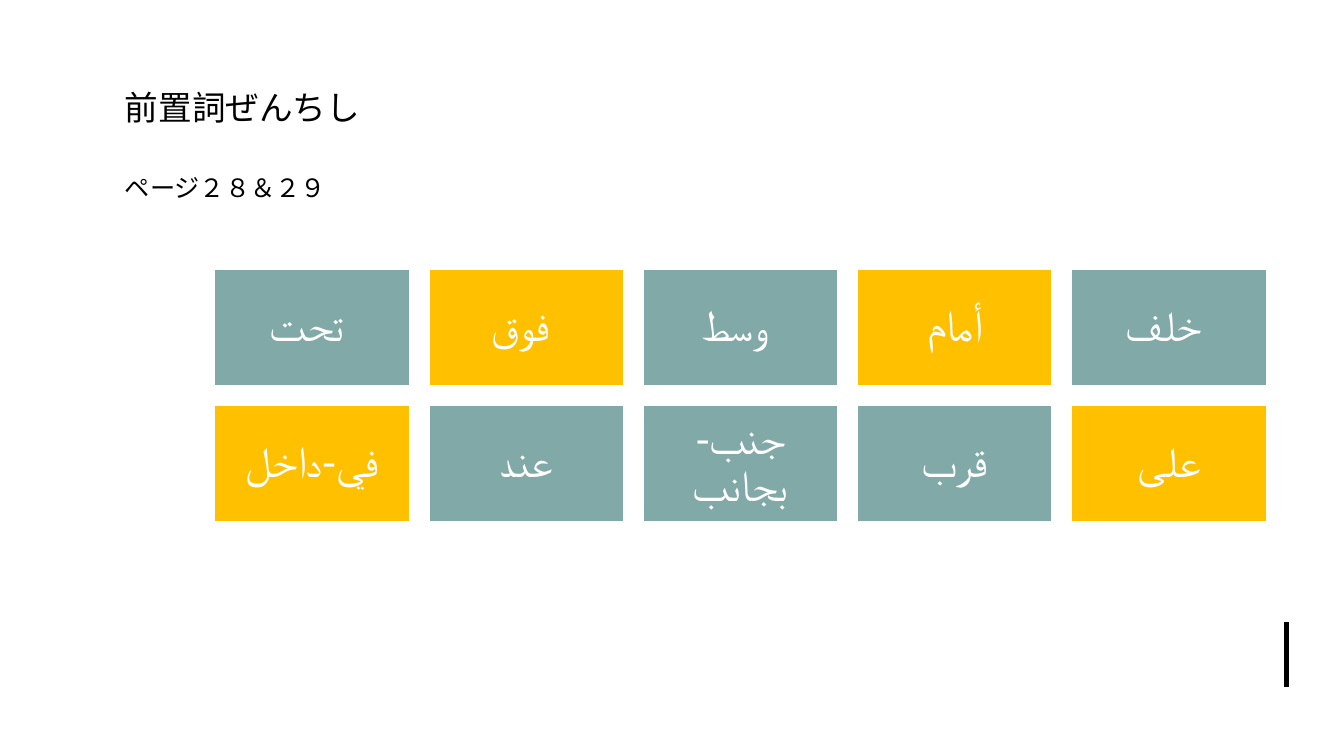
"""Builds a slide of Arabic prepositions on two rows of coloured tiles."""
from typing import NamedTuple

from lxml import etree
from pptx import Presentation
from pptx.dml.color import RGBColor
from pptx.enum.shapes import MSO_CONNECTOR, MSO_SHAPE
from pptx.enum.text import MSO_ANCHOR, MSO_AUTO_SIZE, PP_ALIGN
from pptx.oxml.ns import qn
from pptx.util import Inches, Pt

RECT = MSO_SHAPE.RECTANGLE
STRAIGHT = MSO_CONNECTOR.STRAIGHT
TOP, MIDDLE = MSO_ANCHOR.TOP, MSO_ANCHOR.MIDDLE
LEFT, CENTER = PP_ALIGN.LEFT, PP_ALIGN.CENTER
GROW, FIXED = MSO_AUTO_SIZE.SHAPE_TO_FIT_TEXT, MSO_AUTO_SIZE.NONE

BLACK = RGBColor(0x00, 0x00, 0x00)
WHITE = RGBColor(0xFF, 0xFF, 0xFF)
TEAL = RGBColor(0x80, 0xA9, 0xA7)
GOLD = RGBColor(0xFF, 0xC0, 0x00)

FONT = "Calibri"
COLS = 5
GRID_X, GRID_Y = 2.13, 2.67
TILE_W, TILE_H = 1.93, 1.16
STEP_X, STEP_Y = 2.125, 1.35
PAD = 0.13


class Label(NamedTuple):
    text: str
    top: float
    width: float
    height: float
    size: float


class Tile(NamedTuple):
    text: str
    fill: RGBColor


LABELS = [
    Label("ページ２８＆２９", 1.66, 8.88, 0.4, 18),
    Label("前置詞ぜんちし", 0.81, 9.84, 0.5, 24),
]

TILES = [
    Tile("تحت ", TEAL),
    Tile("فوق ", GOLD),
    Tile("وسط ", TEAL),
    Tile("أمام", GOLD),
    Tile("خلف ", TEAL),
    Tile("في-داخل", GOLD),
    Tile("عند", TEAL),
    Tile("جنب-بجانب", TEAL),
    Tile("قرب", TEAL),
    Tile("على", GOLD),
]


def write(shape, text: str, *, size: float, color: RGBColor, align=LEFT,
          anchor=TOP, fit=FIXED, pad: float | None = None,
          spacing: float | None = None) -> None:
    frame = shape.text_frame
    frame.word_wrap = True
    frame.auto_size = fit
    frame.vertical_anchor = anchor
    if pad is not None:
        frame.margin_left = frame.margin_right = Inches(pad)
        frame.margin_top = frame.margin_bottom = Inches(pad)
    para = frame.paragraphs[0]
    para.alignment = align
    para.line_spacing = spacing
    run = para.add_run()
    run.text = text
    run.font.name = FONT
    run.font.size = Pt(size)
    run.font.color.rgb = color


def add_label(slide, label: Label) -> None:
    box = slide.shapes.add_textbox(Inches(1.14), Inches(label.top),
                                   Inches(label.width), Inches(label.height))
    write(box, label.text, size=label.size, color=BLACK, fit=GROW)


def add_tile(slide, tile: Tile, row: int, col: int) -> None:
    shape = slide.shapes.add_shape(
        RECT, Inches(GRID_X + col * STEP_X), Inches(GRID_Y + row * STEP_Y),
        Inches(TILE_W), Inches(TILE_H))
    shape.shadow.inherit = False
    shape.fill.solid()
    shape.fill.fore_color.rgb = tile.fill
    shape.line.color.rgb = WHITE
    shape.line.width = Pt(1)
    write(shape, tile.text, size=31, color=WHITE, align=CENTER,
          anchor=MIDDLE, pad=PAD, spacing=0.9)


def add_bar(slide) -> None:
    bar = slide.shapes.add_connector(STRAIGHT, Inches(12.76), Inches(6.17),
                                     Inches(12.76), Inches(6.82))
    bar.line.color.rgb = BLACK
    bar.line.width = Pt(3)
    etree.SubElement(bar._element.spPr, qn("a:effectLst"))


def main() -> None:
    deck = Presentation()
    deck.slide_width, deck.slide_height = Inches(13.33), Inches(7.5)
    slide = deck.slides.add_slide(deck.slide_layouts[6])
    add_bar(slide)
    for label in LABELS:
        add_label(slide, label)
    for i, tile in enumerate(TILES):
        add_tile(slide, tile, *divmod(i, COLS))
    deck.save("out.pptx")


if __name__ == "__main__":
    main()
